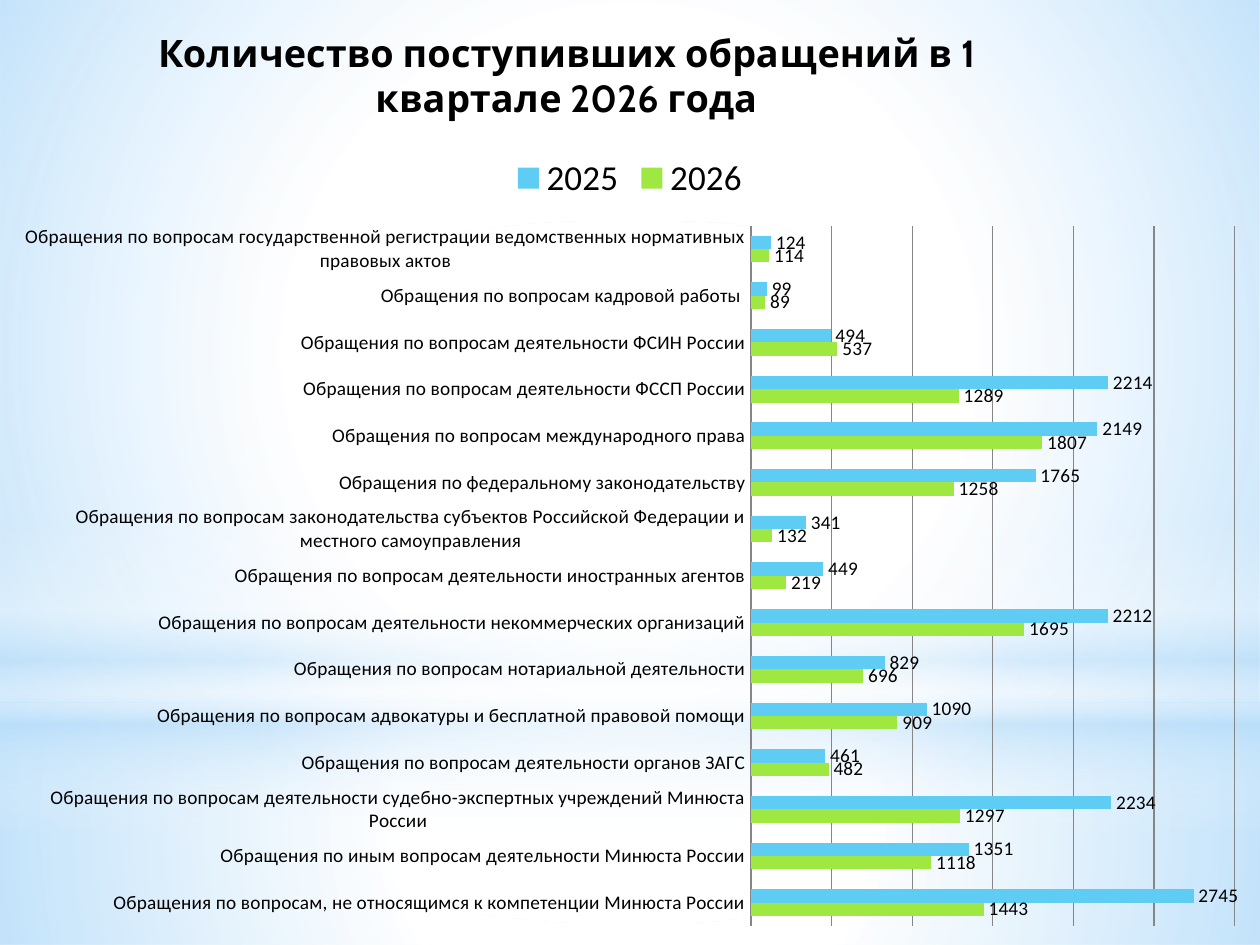
from lxml import etree
from pptx import Presentation
from pptx.chart.data import CategoryChartData
from pptx.dml.color import RGBColor
from pptx.enum.chart import XL_CHART_TYPE, XL_LABEL_POSITION, XL_LEGEND_POSITION, XL_TICK_MARK
from pptx.enum.shapes import MSO_SHAPE
from pptx.oxml import parse_xml
from pptx.oxml.ns import nsdecls, qn
from pptx.util import Cm, Pt

BAR_CLUSTERED = XL_CHART_TYPE.BAR_CLUSTERED
OUTSIDE_END = XL_LABEL_POSITION.OUTSIDE_END
LEGEND_TOP = XL_LEGEND_POSITION.TOP
NO_TICKS = XL_TICK_MARK.NONE
RECTANGLE, OVAL = MSO_SHAPE.RECTANGLE, MSO_SHAPE.OVAL

PAGE_WIDTH, PAGE_HEIGHT = 25.4, 19.05
WHITE, SKY, BLACK, GREY = "FFFFFF", "B4DCFA", "000000", "868686"
TITLE = "Количество поступивших обращений в 1 квартале 2026 года"
YEARS = [("2026", "9FE842"), ("2025", "5ECCF3")]

# Topic, appeals in 2026, appeals in 2025
APPEALS = [
    ("Обращения по вопросам, не относящимся к компетенции Минюста России", 1443, 2745),
    ("Обращения по иным вопросам деятельности Минюста России", 1118, 1351),
    ("Обращения по вопросам деятельности судебно-экспертных учреждений Минюста России", 1297, 2234),
    ("Обращения по вопросам деятельности органов ЗАГС", 482, 461),
    ("Обращения по вопросам адвокатуры и бесплатной правовой помощи", 909, 1090),
    ("Обращения по вопросам нотариальной деятельности", 696, 829),
    ("Обращения по вопросам деятельности некоммерческих организаций", 1695, 2212),
    ("Обращения по вопросам деятельности иностранных агентов", 219, 449),
    ("Обращения по вопросам законодательства субъектов Российской Федерации "
     "и местного самоуправления", 132, 341),
    ("Обращения по федеральному законодательству", 1258, 1765),
    ("Обращения по вопросам международного права", 1807, 2149),
    ("Обращения по вопросам деятельности ФССП России", 1289, 2214),
    ("Обращения по вопросам деятельности ФСИН России", 537, 494),
    ("Обращения по вопросам кадровой работы ", 89, 99),
    ("Обращения по вопросам государственной регистрации ведомственных "
     "нормативных правовых актов", 114, 124),
]

# Linear direction or circular path of a gradient
DOWNWARD = '<a:lin ang="5400000" scaled="0"/>'
CIRCULAR = ('<a:path path="circle"><a:fillToRect l="50000" t="50000" '
            'r="50000" b="50000"/></a:path>')


def color(value):
    return RGBColor.from_string(value)


def set_font(font, size, name="Calibri", bold=False):
    font.size, font.name, font.bold = Pt(size), name, bold
    font.color.rgb = color(BLACK)


def add_glow(slide, kind, box, stops, direction):
    """Shape with a gradient; each stop is position, colour, opacity in percent."""
    glow = slide.shapes.add_shape(kind, *map(Cm, box))
    glow.shadow.inherit = False
    glow.line.fill.background()
    stop_xml = "".join(
        f'<a:gs pos="{place * 1000}"><a:srgbClr val="{tint}">'
        f'<a:alpha val="{opacity * 1000}"/></a:srgbClr></a:gs>'
        for place, tint, opacity in stops)
    gradient = parse_xml(f'<a:gradFill {nsdecls("a")} rotWithShape="1">'
                         f'<a:gsLst>{stop_xml}</a:gsLst>{direction}</a:gradFill>')
    glow.fill.background()
    properties = glow.fill._xPr
    properties.replace(properties.find(qn("a:noFill")), gradient)


def add_background(slide, box):
    left, top, width, height = box
    horizon = 14.17
    add_glow(slide, RECTANGLE, (left, top + horizon, width, height - horizon),
             [(0, WHITE, 91), (37, WHITE, 76), (100, SKY, 79)], CIRCULAR)
    add_glow(slide, RECTANGLE, (left, top, width, horizon),
             [(0, WHITE, 89), (48, WHITE, 62), (100, SKY, 79)], CIRCULAR)
    add_glow(slide, RECTANGLE, (left, top + 10.46, width, 6.35),
             [(0, WHITE, 0), (29, WHITE, 30), (45, SKY, 40),
              (55, WHITE, 26), (65, SKY, 60), (100, WHITE, 0)], DOWNWARD)
    add_glow(slide, OVAL, (left, top + 4.45, width, horizon),
             [(0, WHITE, 100), (56, WHITE, 0)], CIRCULAR)


def set_layout(parent, before, **settings):
    """Place a chart part by fractions of the chart's size."""
    for old in parent.findall(qn("c:layout")):
        parent.remove(old)
    layout = parse_xml(f'<c:layout {nsdecls("c")}><c:manualLayout/></c:layout>')
    for name, value in settings.items():
        etree.SubElement(layout[0], qn(f"c:{name}"), val=str(value))
    parent.find(qn(f"c:{before}")).addprevious(layout)


def add_appeals_chart(slide, box):
    data = CategoryChartData()
    topics, *counts = zip(*APPEALS)
    data.categories = topics
    for (year, _), values in zip(YEARS, counts):
        data.add_series(year, values)
    chart = slide.shapes.add_chart(BAR_CLUSTERED, *map(Cm, box), data).chart
    set_font(chart.font, 18, "Cabin")

    # Title and legend
    title = chart.chart_title
    title.text_frame.text = TITLE
    set_font(title.text_frame.paragraphs[0].runs[0].font, 21.6, "Cabin", True)
    title.include_in_layout = False
    set_layout(title._element, "overlay", xMode="edge", yMode="edge", x=0.12, y=0.02)
    chart.has_legend = True
    chart.legend.position = LEGEND_TOP
    chart.legend.include_in_layout = False
    set_font(chart.legend.font, 20)

    # Axes
    topic_axis, count_axis = chart.category_axis, chart.value_axis
    topic_axis.major_tick_mark = NO_TICKS
    topic_axis.format.line.color.rgb = color(GREY)
    set_font(topic_axis.tick_labels.font, 11)
    count_axis.visible = False
    count_axis.minimum_scale, count_axis.maximum_scale = 0, 3000
    count_axis.major_unit = 500
    count_axis.has_major_gridlines = True
    count_axis.major_gridlines.format.line.color.rgb = color(GREY)

    # Bars and their labels
    plot = chart.plots[0]
    plot.gap_width, plot.overlap = 150, 0
    plot.vary_by_categories = False
    for series, (_, tint) in zip(plot.series, YEARS):
        series.format.fill.solid()
        series.format.fill.fore_color.rgb = color(tint)
        labels = series.data_labels
        labels.show_value = True
        labels.position = OUTSIDE_END
        set_font(labels.font, 11)
    plot_area = chart._chartSpace.chart.plotArea
    set_layout(plot_area, "barChart", layoutTarget="inner", xMode="edge", yMode="edge",
               x=0.596, y=0.239, w=0.384, h=0.741)


def main():
    deck = Presentation()
    deck.slide_width, deck.slide_height = Cm(PAGE_WIDTH), Cm(PAGE_HEIGHT)
    slide = deck.slides.add_slide(deck.slide_layouts[6])
    page = (0, 0, PAGE_WIDTH, PAGE_HEIGHT)
    add_background(slide, page)
    add_appeals_chart(slide, page)
    deck.save("out.pptx")


if __name__ == "__main__":
    main()
